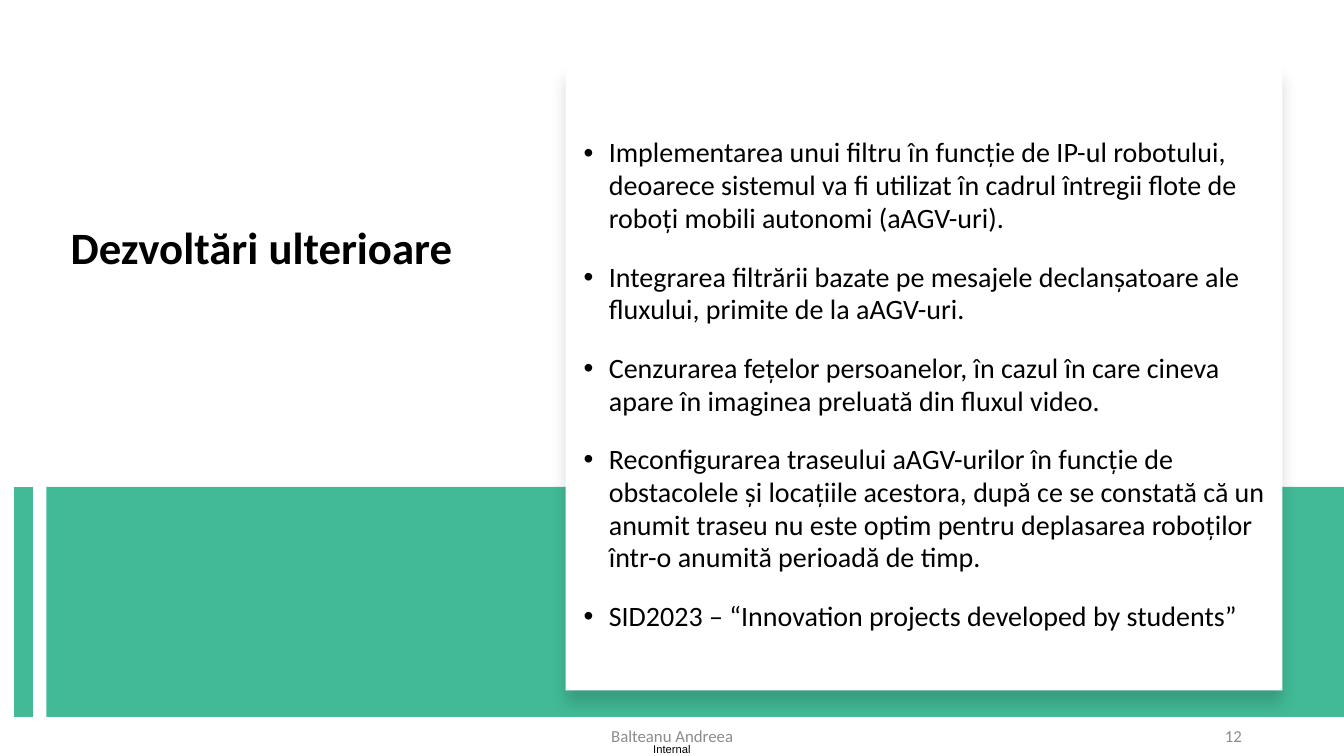
from lxml.etree import SubElement
from pptx import Presentation
from pptx.dml.color import RGBColor
from pptx.enum.shapes import MSO_CONNECTOR, MSO_SHAPE
from pptx.enum.text import MSO_ANCHOR, MSO_AUTO_SIZE, PP_ALIGN
from pptx.oxml.ns import qn
from pptx.util import Pt

GREEN, GREY, BLACK, WHITE = "42BA97", "8C8C8C", "000000", "FFFFFF"
WIDE, HIGH = 960, 540
ITEMS = [
    "Implementarea unui filtru în funcție de IP-ul robotului, deoarece sistemul "
    "va fi utilizat în cadrul întregii flote de roboți mobili autonomi (aAGV-uri).",
    "Integrarea filtrării bazate pe mesajele declanșatoare ale fluxului, "
    "primite de la aAGV-uri.",
    "Cenzurarea fețelor persoanelor, în cazul în care cineva apare în imaginea "
    "preluată din fluxul video.",
    "Reconfigurarea traseului aAGV-urilor în funcție de obstacolele și locațiile "
    "acestora, după ce se constată că un anumit traseu nu este optim pentru "
    "deplasarea roboților într-o anumită perioadă de timp.",
    "SID2023 – “Innovation projects developed by students”",
]


def color(code):
    return RGBColor.from_string(code)


def assign(target, values):
    for name, value in values.items():
        setattr(target, name, value)


def place(shape, box):
    assign(shape, dict(zip(("left", "top", "width", "height"), map(Pt, box))))


def write(para, text, size, code=BLACK, face="Calibri", bold=False):
    run = para.add_run()
    run.text = text
    assign(run.font, {"name": face, "size": Pt(size), "bold": bold})
    run.font.color.rgb = color(code)


def block(slide, box, code):
    shape = slide.shapes.add_shape(MSO_SHAPE.RECTANGLE, *map(Pt, box))
    shape.shadow.inherit = False
    shape.fill.solid()
    shape.fill.fore_color.rgb = color(code)
    shape.line.fill.background()
    return shape


def label(slide, box, text, size, align, code=BLACK, face="Calibri", pad=0):
    shape = slide.shapes.add_textbox(*map(Pt, box))
    frame = shape.text_frame
    assign(frame, {"word_wrap": True, "vertical_anchor": MSO_ANCHOR.MIDDLE,
                   "margin_left": Pt(pad), "margin_right": Pt(pad),
                   "margin_top": 0, "margin_bottom": 0})
    para = frame.paragraphs[0]
    para.alignment = align
    write(para, text, size, code, face)


def band(slide, box):
    """Green band with a thick stripe to its left."""
    left, top, _, height = box
    block(slide, box, GREEN)
    side = left - 16.5
    ends = map(Pt, (side, top, side, top + height))
    stripe = slide.shapes.add_connector(MSO_CONNECTOR.STRAIGHT, *ends)
    stripe.line.width = Pt(14)
    stripe.line.color.rgb = color(GREEN)
    SubElement(stripe.element.spPr, qn("a:effectLst"))


def card(slide, box):
    """White panel with a soft shadow below."""
    panel = block(slide, box, WHITE)
    effects = panel.element.spPr.find(qn("a:effectLst"))
    shade = SubElement(effects, qn("a:outerShdw"), blurRad=str(Pt(11)),
                       dist=str(Pt(10)), dir="5400000", algn="t", rotWithShape="0")
    tint = SubElement(shade, qn("a:srgbClr"), val=BLACK)
    SubElement(tint, qn("a:alpha"), val="15000")


def heading(slide, box):
    title = slide.shapes.title
    place(title, box)
    frame = title.text_frame
    assign(frame, {"word_wrap": True, "auto_size": MSO_AUTO_SIZE.NONE,
                   "vertical_anchor": MSO_ANCHOR.TOP})
    para = frame.paragraphs[0]
    assign(para, {"alignment": PP_ALIGN.LEFT, "line_spacing": 0.9})
    write(para, "Dezvoltări ulterioare", 32, bold=True)


def points(slide, box):
    body = slide.placeholders[1]
    place(body, box)
    body.element.getparent().append(body.element)  # in front of the card
    frame = body.text_frame
    assign(frame, {"word_wrap": True, "auto_size": MSO_AUTO_SIZE.NONE,
                   "vertical_anchor": MSO_ANCHOR.TOP, "margin_top": Pt(40)})
    for rank, text in enumerate(ITEMS):
        para = frame.add_paragraph() if rank else frame.paragraphs[0]
        assign(para, {"alignment": PP_ALIGN.LEFT, "line_spacing": 0.98,
                      "space_before": Pt(10 if rank else 0), "space_after": Pt(8)})
        props = para._p.get_or_add_pPr()
        props.set("marL", str(Pt(18)))
        props.set("indent", str(-Pt(18)))
        SubElement(props, qn("a:buFont"), typeface="Arial")
        SubElement(props, qn("a:buChar"), char="•")
        write(para, text, 20)


def footer(slide, box):
    left, top, width, height = box
    label(slide, (left, top, 324, height), "Balteanu Andreea", 12,
          PP_ALIGN.CENTER, GREY, pad=7.2)
    label(slide, (left + width - 216, top, 216, height), "12", 12,
          PP_ALIGN.RIGHT, GREY, pad=7.2)
    label(slide, (WIDE / 2 - 20, HIGH - 9.4, 40, 9.4), "Internal", 8,
          PP_ALIGN.CENTER, face="Arial")


def main():
    deck = Presentation()
    assign(deck, {"slide_width": Pt(WIDE), "slide_height": Pt(HIGH)})
    slide = deck.slides.add_slide(deck.slide_layouts[1])
    heading(slide, (43.2, 157.7, 298.8, 56.2))
    band(slide, (33.2, 347.8, WIDE - 33.2, 164.2))
    card(slide, (404, 46.1, 512, 447.1))
    points(slide, (409.7, 57.6, 506.9, 425.5))
    footer(slide, (318.2, 511.2, 576, 28.8))
    deck.save("out.pptx")


if __name__ == "__main__":
    main()
